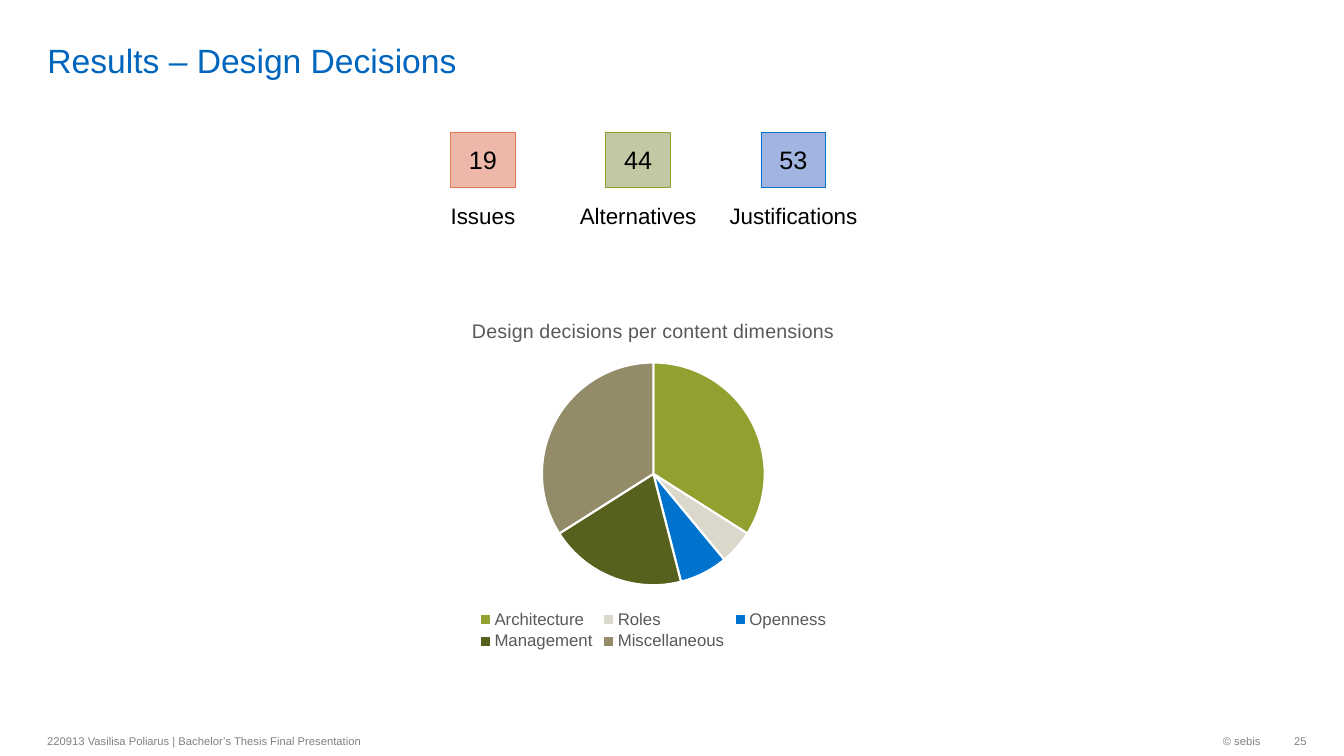
from pptx import Presentation
from pptx import util as u
from pptx.chart.data import CategoryChartData
from pptx.dml.color import RGBColor
from pptx.enum import chart as ch, shapes, text

HUES = {
    "title": "0065BD", "ink": "000000", "muted": "808080", "label": "595959",
    "white": "FFFFFF", "green": "91A02F", "sand": "DAD7CB", "blue": "0073CF",
    "olive": "57601C", "taupe": "948B69", "orange": "E37C4D",
    "pink": "EDB8AA", "sage": "C1C8A4", "sky": "A2B5E1",
}
COUNTS = [
    ("19", "Issues", "pink", "orange"),
    ("44", "Alternatives", "sage", "green"),
    ("53", "Justifications", "sky", "blue"),
]
SHARES = [
    ("Architecture", 34, "green"),
    ("Roles", 5, "sand"),
    ("Openness", 7, "blue"),
    ("Management", 20, "olive"),
    ("Miscellaneous", 34, "taupe"),
]
LEFT, CENTER, RIGHT = text.PP_ALIGN.LEFT, text.PP_ALIGN.CENTER, text.PP_ALIGN.RIGHT


def color(name):
    return RGBColor.from_string(HUES[name])


def style(font, size, hue):
    font.name = "Arial"
    font.size = u.Pt(size)
    font.bold = False
    font.color.rgb = color(hue)


def place(box):
    return [u.Inches(n) for n in box]


def write(shape, words, size, hue, align):
    frame = shape.text_frame
    frame.word_wrap = True
    frame.vertical_anchor = text.MSO_ANCHOR.MIDDLE
    frame.text = words
    para = frame.paragraphs[0]
    para.alignment = align
    style(para.font, size, hue)
    return frame


def add_label(slide, box, words, size, hue, align):
    return write(slide.shapes.add_textbox(*place(box)), words, size, hue, align)


def add_title(slide, box, words):
    title = slide.shapes.title
    title.left, title.top, title.width, title.height = place(box)
    frame = write(title, words, 24, "title", LEFT)
    frame.vertical_anchor = text.MSO_ANCHOR.BOTTOM
    frame.margin_top = frame.margin_bottom = 0


def add_counts(slide, box):
    """Numbered squares in equal columns, each with its label below."""
    left, top, width, height = box
    step = width / len(COUNTS)
    side, tall, foot = 0.64, 0.55, 0.37
    for i, (count, name, fill, edge) in enumerate(COUNTS):
        x = left + i * step
        tile = slide.shapes.add_shape(
            shapes.MSO_SHAPE.RECTANGLE,
            *place((x + (step - side) / 2, top, side, tall)))
        tile.shadow.inherit = False
        tile.fill.solid()
        tile.fill.fore_color.rgb = color(fill)
        tile.line.color.rgb = color(edge)
        tile.line.width = u.Pt(0.75)
        write(tile, count, 18, "ink", CENTER)
        add_label(slide, (x, top + height - foot, step, foot),
                  name, 16, "ink", CENTER)


def add_pie(slide, box, name):
    data = CategoryChartData()
    data.categories = [share[0] for share in SHARES]
    data.add_series(name, [share[1] for share in SHARES])
    chart = slide.shapes.add_chart(
        ch.XL_CHART_TYPE.PIE, *place(box), data).chart
    style(chart.font, 10, "ink")
    chart.has_title = True
    chart.chart_title.include_in_layout = False
    head = chart.chart_title.text_frame
    head.text = name
    style(head.paragraphs[0].font, 14, "label")
    chart.has_legend = True
    chart.legend.position = ch.XL_LEGEND_POSITION.BOTTOM
    chart.legend.include_in_layout = False
    style(chart.legend.font, 12, "label")
    plot = chart.plots[0]
    plot.vary_by_categories = True
    for i, (_, _, hue) in enumerate(SHARES):
        part = plot.series[0].points[i].format
        part.fill.solid()
        part.fill.fore_color.rgb = color(hue)
        part.line.color.rgb = color("white")
        part.line.width = u.Pt(1.5)


def add_footer(slide, box):
    left, top, width, height = box
    end = left + width
    add_label(slide, (left, top, 4.73, height),
              "220913 Vasilisa Poliarus | Bachelor’s Thesis Final Presentation",
              8, "muted", LEFT)
    add_label(slide, (end - 2.7, top, 2.34, height), "© sebis", 8, "muted", RIGHT)
    page = add_label(slide, (end - 0.36, top, 0.36, height), "25", 8, "muted", RIGHT)
    page.margin_right = 0


def main():
    deck = Presentation()
    deck.slide_width, deck.slide_height = u.Inches(13.33), u.Inches(7.5)
    slide = deck.slides.add_slide(deck.slide_layouts[5])
    add_title(slide, (0.37, 0.01, 10.99, 0.79), "Results – Design Decisions")
    add_counts(slide, (4.02, 1.31, 4.62, 1.01))
    add_pie(slide, (3.91, 3, 5.14, 3.49), "Design decisions per content dimensions")
    add_footer(slide, (0.37, 7.19, 12.59, 0.32))
    deck.save("out.pptx")


if __name__ == "__main__":
    main()
